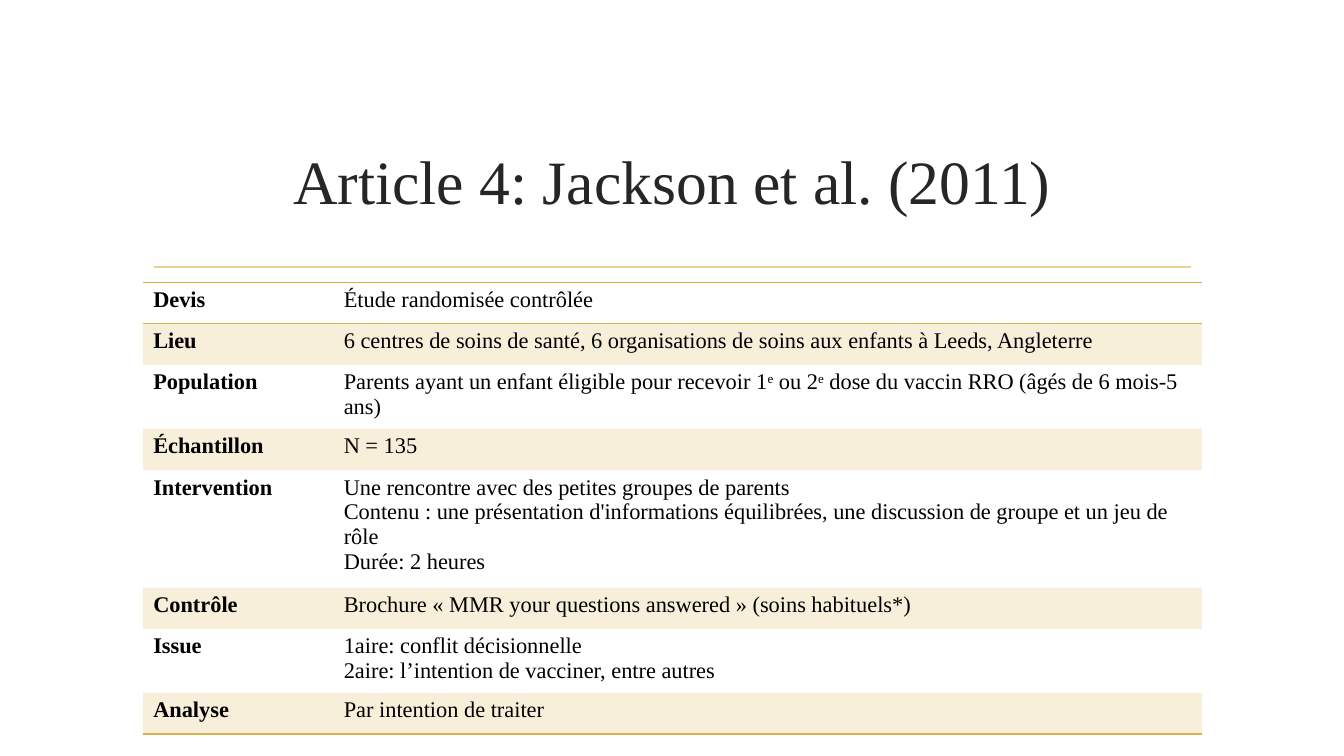
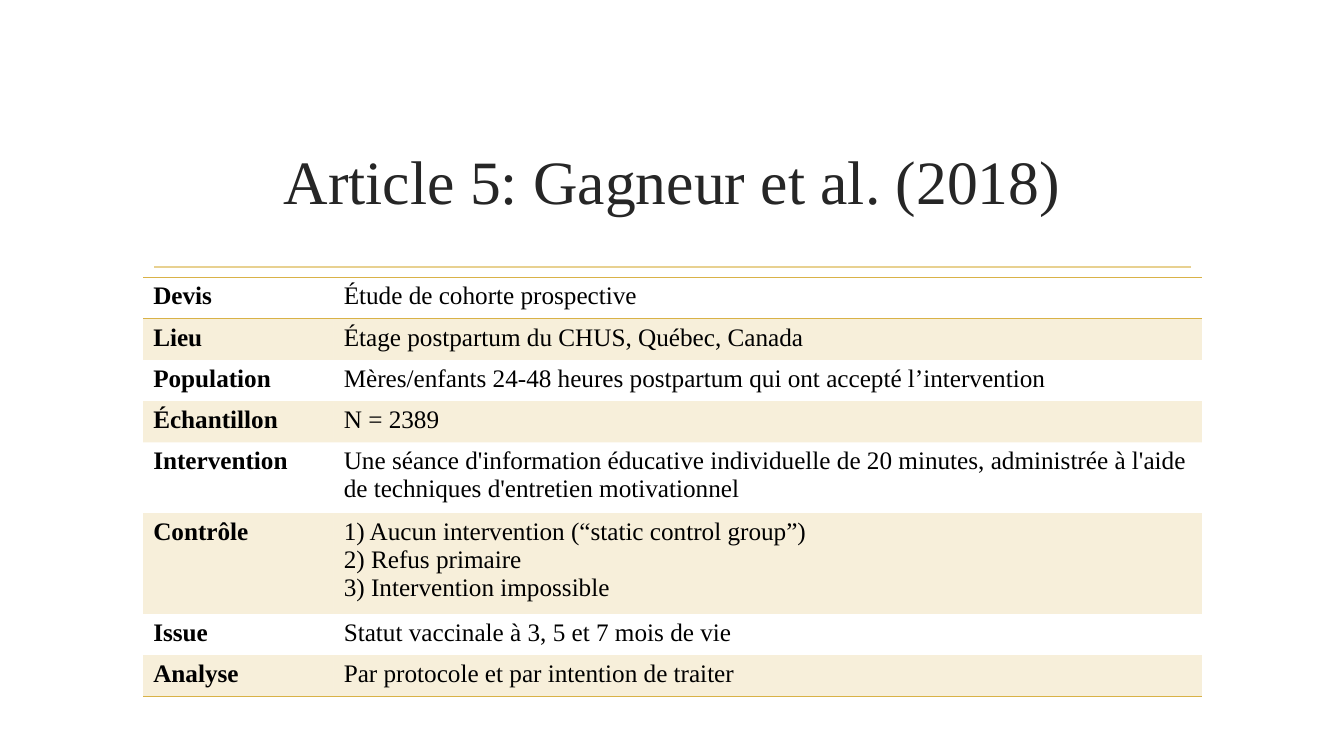
from dataclasses import dataclass

from lxml.etree import SubElement
from pptx import Presentation
from pptx.dml.color import RGBColor as Rgb
from pptx.enum.shapes import MSO_CONNECTOR as Connector
from pptx.enum.text import MSO_ANCHOR as Anchor, PP_ALIGN as Align
from pptx.oxml import parse_xml
from pptx.oxml.ns import nsdecls, qn
from pptx.util import Inches, Pt


@dataclass(frozen=True)
class Theme:
    font: str = "Times New Roman"
    title_color: str = "262626"
    text_color: str = "000000"
    gold: str = "D9B247"
    rule_color: str = "E8D191"
    band_opacity: int = 20
    title_size: int = 44
    rule_width: float = 1.25
    border_width: int = 1


LABELS = ("Devis", "Lieu", "Population", "Échantillon",
          "Intervention", "Contrôle", "Issue", "Analyse")

ARTICLES = (
    {
        "title": "Article 4: Jackson et al. (2011)",
        "top": 2.8,
        "size": 16,
        "findings": (
            ["Étude randomisée contrôlée"],
            ["6 centres de soins de santé, 6 organisations de soins aux enfants à Leeds, Angleterre"],
            ["Parents ayant un enfant éligible pour recevoir 1^e^ ou 2^e^ dose du vaccin RRO (âgés de 6 mois-5 ans)"],
            ["N = 135"],
            ["Une rencontre avec des petites groupes de parents",
             "Contenu : une présentation d'informations équilibrées, une discussion de groupe et un jeu de rôle",
             "Durée: 2 heures"],
            ["Brochure « MMR your questions answered » (soins habituels*)"],
            ["1aire: conflit décisionnelle",
             "2aire: l’intention de vacciner, entre autres"],
            ["Par intention de traiter"],
        ),
    },
    {
        "title": "Article 5: Gagneur et al. (2018)",
        "top": 2.75,
        "size": 18,
        "findings": (
            ["Étude de cohorte prospective"],
            ["Étage postpartum du CHUS, Québec, Canada"],
            ["Mères/enfants 24-48 heures postpartum qui ont accepté l’intervention"],
            ["N = 2389"],
            ["Une séance d'information éducative individuelle de 20 minutes, "
             "administrée à l'aide de techniques d'entretien motivationnel"],
            ["1) Aucun intervention (“static control group”)",
             "2) Refus primaire",
             "3) Intervention impossible"],
            ["Statut vaccinale à 3, 5 et 7 mois de vie"],
            ["Par protocole et par intention de traiter"],
        ),
    },
)


class Deck:
    """Builds article summary slides in one shared style."""

    LEFT, WIDTH = 1.42, 10.5
    LABEL_WIDTH, ROW_HEIGHT = 1.89, 0.41
    NO_GRID_STYLE = "{2D5ABB26-0587-4C30-8999-92F81FD0307C}"

    def __init__(self, theme):
        self.theme = theme
        self.prs = Presentation()
        self.prs.slide_width, self.prs.slide_height = Inches(13.33), Inches(7.5)
        self.slide = None

    def new_slide(self):
        self.slide = self.prs.slides.add_slide(self.prs.slide_layouts[6])

    def add_text(self, paragraph, text, size, color, bold=False):
        look = {"name": self.theme.font, "size": Pt(size), "bold": bold}
        for index, part in enumerate(text.split("^")):
            run = paragraph.add_run()
            run.text = part
            for attribute, value in look.items():
                setattr(run.font, attribute, value)
            run.font.color.rgb = Rgb.from_string(color)
            if index % 2:
                run._r.get_or_add_rPr().set("baseline", "30000")

    def rule(self):
        line = self.slide.shapes.add_connector(
            Connector.STRAIGHT, Inches(1.53), Inches(2.65), Inches(11.81), Inches(2.65))
        line.line.color.rgb = Rgb.from_string(self.theme.rule_color)
        line.line.width = Pt(self.theme.rule_width)
        SubElement(line._element.spPr, qn("a:effectLst"))

    def title(self, text):
        heading = self.slide.shapes.add_textbox(
            Inches(self.LEFT), Inches(1.07), Inches(self.WIDTH), Inches(1.43))
        frame = heading.text_frame
        for attribute, value in {"word_wrap": True, "vertical_anchor": Anchor.MIDDLE}.items():
            setattr(frame, attribute, value)
        frame.paragraphs[0].alignment = Align.CENTER
        self.add_text(frame.paragraphs[0], text, self.theme.title_size, self.theme.title_color)

    def border(self, cell, side):
        cell._tc.get_or_add_tcPr().append(parse_xml(
            f'<a:{side} {nsdecls("a")} w="{Pt(self.theme.border_width)}"><a:solidFill>'
            f'<a:srgbClr val="{self.theme.gold}"/></a:solidFill></a:{side}>'))

    def band(self, cell):
        cell.fill.solid()
        cell.fill.fore_color.rgb = Rgb.from_string(self.theme.gold)
        tint = cell._tc.tcPr.find(qn("a:solidFill")).find(qn("a:srgbClr"))
        SubElement(tint, qn("a:alpha")).set("val", str(self.theme.band_opacity * 1000))

    def cell(self, cell, lines, size, bold, sides, banded):
        frame = cell.text_frame
        for index, text in enumerate(lines):
            paragraph = frame.add_paragraph() if index else frame.paragraphs[0]
            self.add_text(paragraph, text, size, self.theme.text_color, bold)
        for side in sides:
            self.border(cell, side)
        if banded:
            self.band(cell)
        else:
            cell.fill.background()

    def summary(self, findings, top, size):
        table = self.slide.shapes.add_table(
            len(LABELS), 2, Inches(self.LEFT), Inches(top),
            Inches(self.WIDTH), Inches(self.ROW_HEIGHT * len(LABELS))).table
        for attribute in ("first_row", "horz_banding"):
            setattr(table, attribute, False)
        table._tbl.tblPr.find(qn("a:tableStyleId")).text = self.NO_GRID_STYLE
        for column, width in zip(table.columns, (self.LABEL_WIDTH, self.WIDTH - self.LABEL_WIDTH)):
            column.width = Inches(width)
        borders = {0: ("lnT", "lnB"), len(LABELS) - 1: ("lnB",)}
        for row, (label, lines) in enumerate(zip(LABELS, findings)):
            for column, content in enumerate(([label], lines)):
                self.cell(table.cell(row, column), content, size,
                          column == 0, borders.get(row, ()), row % 2 == 1)

    def save(self):
        self.prs.save("out.pptx")


def main():
    deck = Deck(Theme())
    for article in ARTICLES:
        deck.new_slide()
        deck.rule()
        deck.title(article["title"])
        deck.summary(article["findings"], article["top"], article["size"])
    deck.save()


if __name__ == "__main__":
    main()
